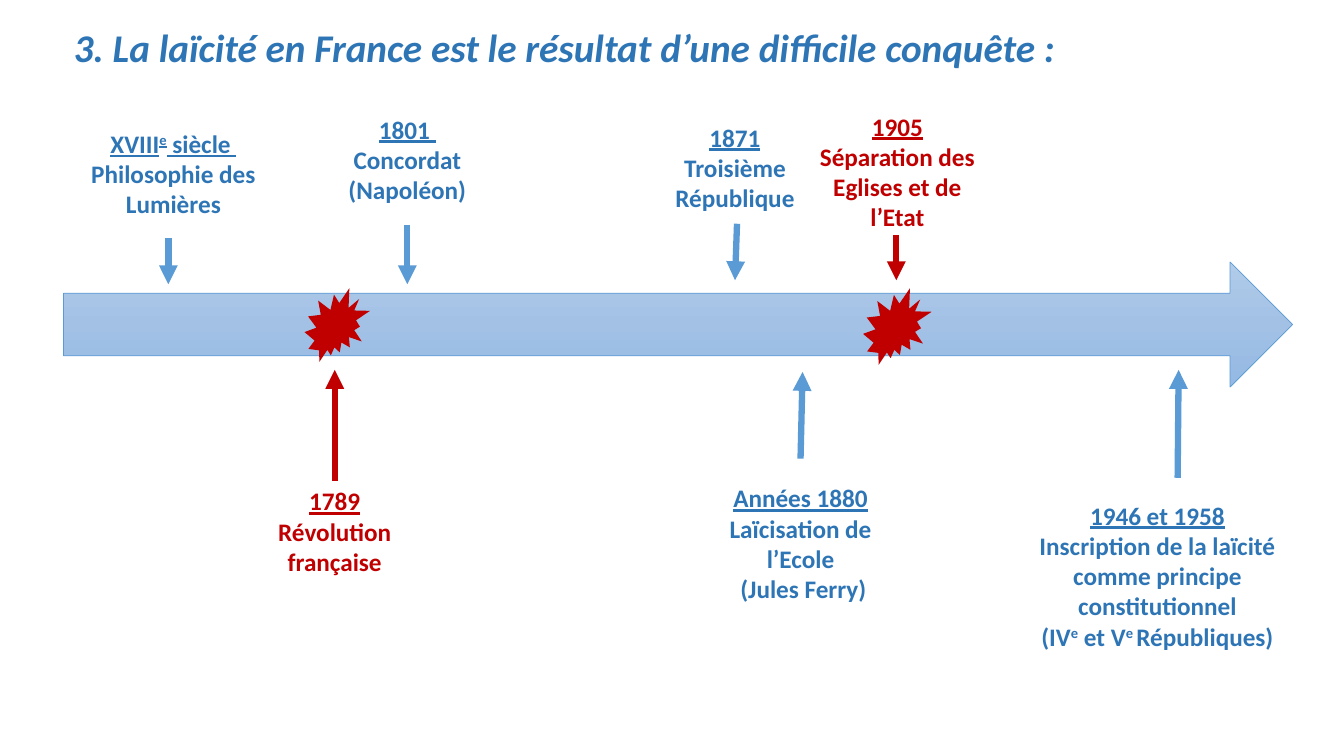
from lxml import etree
from copy import deepcopy

from pptx import Presentation
from pptx.dml.color import RGBColor
from pptx.enum.shapes import MSO_CONNECTOR, MSO_SHAPE
from pptx.enum.text import MSO_ANCHOR, MSO_AUTO_SIZE, PP_ALIGN
from pptx.oxml.ns import qn
from pptx.util import Inches, Pt

BLUE = RGBColor(0x2E, 0x75, 0xB6)
LIGHT_BLUE = RGBColor(0x5B, 0x9B, 0xD5)
RED = RGBColor(0xC0, 0x00, 0x00)
GRADIENT = [
    (0, RGBColor(0xB1, 0xCB, 0xE9)),
    (0.5, RGBColor(0xA3, 0xC1, 0xE5)),
    (1, RGBColor(0x93, 0xB9, 0xE4)),
]

CENTER, LEFT = PP_ALIGN.CENTER, PP_ALIGN.LEFT
TOP = MSO_ANCHOR.TOP
NO_FIT, GROW = MSO_AUTO_SIZE.NONE, MSO_AUTO_SIZE.SHAPE_TO_FIT_TEXT
STRAIGHT = MSO_CONNECTOR.STRAIGHT
RIGHT_ARROW, SEAL = MSO_SHAPE.RIGHT_ARROW, MSO_SHAPE.EXPLOSION2
TOP_SIDE = 0

# Text box, arrow start and end, red or not, date, then lines; ^ surrounds superscripts
EVENTS = [
    ((0.63, 1.22, 2.18, 1.01), (1.67, 2.36), (1.67, 2.82), False,
     ["XVIII^e^ siècle ", "Philosophie des Lumières"]),
    ((2.23, 4.77, 2.18, 1.01), (3.32, 4.77), (3.32, 3.67), True,
     ["1789", "Révolution française"]),
    ((2.95, 1.08, 2.18, 1.01), (4.04, 2.23), (4.04, 2.82), False,
     ["1801 ", "Concordat", "(Napoléon)"]),
    ((6.2, 1.16, 2.18, 1.01), (7.31, 2.22), (7.29, 2.78), False,
     ["1871", "Troisième République"]),
    ((6.85, 4.74, 2.18, 1.31), (7.94, 4.55), (7.96, 3.69), False,
     ["Années 1880", "Laïcisation de l’Ecole", " (Jules Ferry)"]),
    ((7.94, 1.05, 1.92, 1.31), (8.89, 2.33), (8.89, 2.78), True,
     ["1905", "Séparation des Eglises et de l’Etat"]),
    ((10.13, 4.91, 2.7, 1.62), (11.68, 4.74), (11.69, 3.67), False,
     ["1946 et 1958", "Inscription de la laïcité comme principe constitutionnel",
      "(IV^e^ et V^e ^Républiques)"]),
]
SEALS = [(3.02, 2.86, 0.65, 0.73), (8.56, 2.86, 0.68, 0.76)]


def apply(target, values):
    """Set each named attribute of target."""
    for name, value in values.items():
        setattr(target, name, value)


class TimelineSlide:
    title_font = {"name": "Calibri", "size": Pt(28), "bold": True, "italic": True}
    event_font = {"name": "Calibri", "size": Pt(18), "bold": True}

    def __init__(self, prs):
        self.slide = prs.slides.add_slide(prs.slide_layouts[5])
        self.shapes = self.slide.shapes

    def title(self, text, box):
        sp = self.shapes.title
        apply(sp, dict(zip(("left", "top", "width", "height"), map(Inches, box))))
        tf = sp.text_frame
        apply(tf, {"word_wrap": True, "auto_size": NO_FIT, "vertical_anchor": TOP})
        p = tf.paragraphs[0]
        apply(p, {"alignment": LEFT, "line_spacing": 0.9, "space_before": Pt(10)})
        r = p.add_run()
        r.text = text
        apply(r.font, self.title_font)
        r.font.color.rgb = BLUE

    def shape(self, kind, box):
        sp = self.shapes.add_shape(kind, *map(Inches, box))
        sp.shadow.inherit = False
        return sp

    def time_arrow(self, box):
        sp = self.shape(RIGHT_ARROW, box)
        sp.fill.gradient()
        sp.fill.gradient_angle = 270
        first_stop = next(sp._element.iter(qn("a:gs")))
        first_stop.addnext(deepcopy(first_stop))
        for stop, (position, color) in zip(sp.fill.gradient_stops, GRADIENT):
            stop.position = position
            stop.color.rgb = color
        sp.line.color.rgb = LIGHT_BLUE
        sp.line.width = Pt(0.5)

    def seal(self, box):
        sp = self.shape(SEAL, box)
        sp.fill.solid()
        sp.fill.fore_color.rgb = RED
        sp.line.fill.background()

    def label(self, box, lines, color):
        """Add a centred text box whose first line, the date, is underlined."""
        sp = self.shapes.add_textbox(*map(Inches, box))
        tf = sp.text_frame
        apply(tf, {"word_wrap": True, "auto_size": GROW})
        for i, line in enumerate(lines):
            p = tf.add_paragraph() if i else tf.paragraphs[0]
            p.alignment = CENTER
            for j, part in enumerate(line.split("^")):
                r = p.add_run()
                r.text = part
                apply(r.font, {**self.event_font, "underline": i == 0})
                r.font.color.rgb = color
                if j % 2:
                    r._r.get_or_add_rPr().set("baseline", "30000")
        return sp

    def pointer(self, start, end, color):
        cxn = self.shapes.add_connector(STRAIGHT, *map(Inches, start + end))
        cxn.line.color.rgb = color
        cxn.line.width = Pt(4.5)
        etree.SubElement(cxn.line._get_or_add_ln(), qn("a:tailEnd"), type="triangle")
        etree.SubElement(cxn._element.spPr, qn("a:effectLst"))
        return cxn

    def event(self, box, start, end, is_red, lines):
        label = self.label(box, lines, RED if is_red else BLUE)
        cxn = self.pointer(start, end, RED if is_red else LIGHT_BLUE)
        left, top, width, _ = box
        if start == (round(left + width / 2, 2), top):
            cxn.begin_connect(label, TOP_SIDE)


def main():
    prs = Presentation()
    prs.slide_width, prs.slide_height = Inches(13.33), Inches(7.5)
    s = TimelineSlide(prs)
    s.title("3. La laïcité en France est le résultat d’une difficile conquête :",
            (0.63, 0.23, 11.5, 0.63))
    s.time_arrow((0.63, 2.6, 12.19, 1.24))
    for event in EVENTS:
        s.event(*event)
    for box in SEALS:
        s.seal(box)
    prs.save("out.pptx")


if __name__ == "__main__":
    main()
